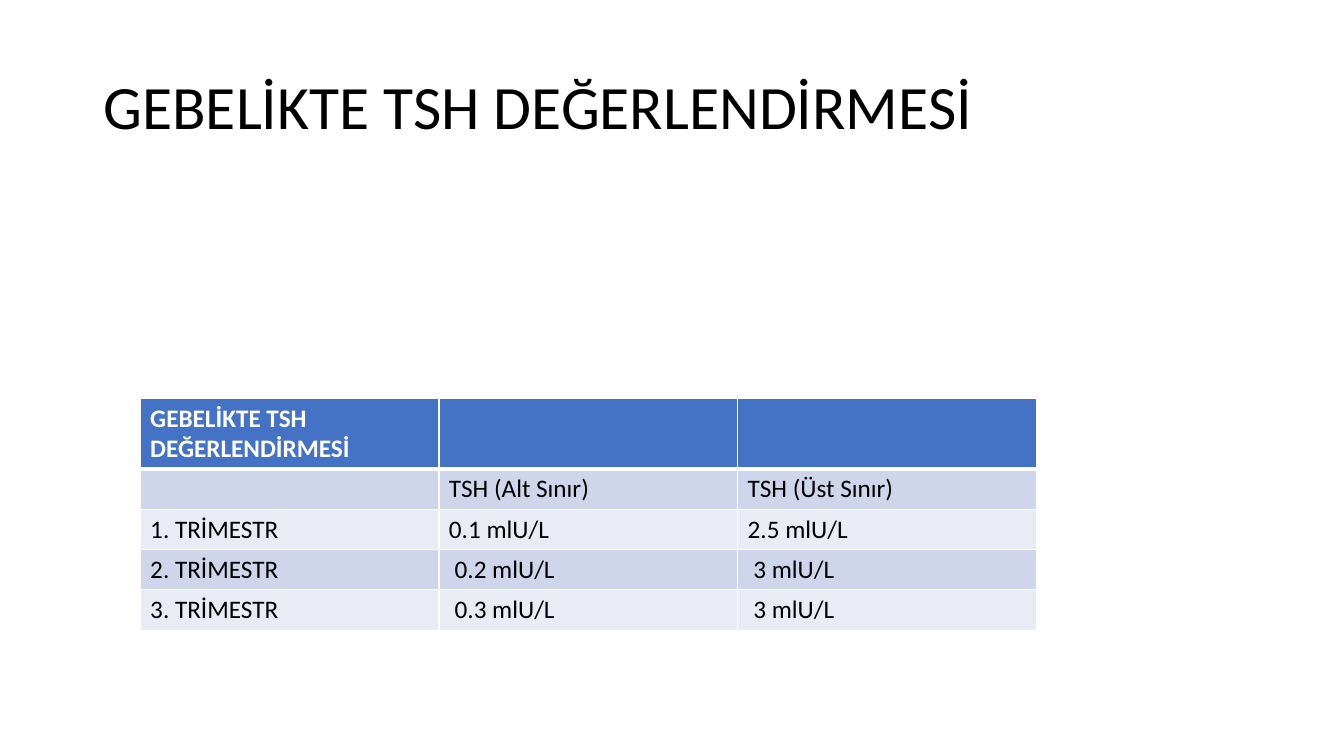
import pptx
import pptx.dml.color
import pptx.enum.text
import pptx.oxml
import pptx.oxml.ns
import pptx.util
from pptx.util import Inches

COLORS = {
    "text": "000000",
    "white": "FFFFFF",
    "header": "4472C4",
    "band_dark": "CFD5EA",
    "band_light": "E9EBF5",
}
FONT = "Calibri"
TITLE = "GEBELİKTE TSH DEĞERLENDİRMESİ"
TSH_ROWS = [
    [TITLE, "", ""],
    ["", "TSH (Alt Sınır)", "TSH (Üst Sınır)"],
    ["1. TRİMESTR", "0.1 mlU/L", "2.5 mlU/L"],
    ["2. TRİMESTR", " 0.2 mlU/L", " 3 mlU/L"],
    ["3. TRİMESTR", " 0.3 mlU/L", " 3 mlU/L"],
]
HEADER_HEIGHT = 0.7


def rgb(name):
    return pptx.dml.color.RGBColor.from_string(COLORS[name])


def write_text(text_frame, text, size=18, color="text", bold=False, line_spacing=1.0):
    paragraph = text_frame.paragraphs[0]
    paragraph.line_spacing = line_spacing
    paragraph.font.size = pptx.util.Pt(size)
    if text:
        run = paragraph.add_run()
        run.text = text
        run.font.name = FONT
        run.font.size = pptx.util.Pt(size)
        run.font.bold = bold
        run.font.color.rgb = rgb(color)


def set_borders(cell, **widths):
    """Draw white cell borders; widths are points keyed by side (L, R, T, B)."""
    properties = cell._tc.get_or_add_tcPr()
    for side, width in widths.items():
        properties.append(pptx.oxml.parse_xml(
            f'<a:ln{side} {pptx.oxml.ns.nsdecls("a")} w="{pptx.util.Pt(width)}">'
            f'<a:solidFill><a:srgbClr val="{COLORS["white"]}"/></a:solidFill>'
            f'</a:ln{side}>'))


def add_title(slide, left, top, width, height):
    box = slide.shapes.add_textbox(
        Inches(left), Inches(top), Inches(width), Inches(height))
    box.text_frame.word_wrap = True
    box.text_frame.vertical_anchor = pptx.enum.text.MSO_ANCHOR.MIDDLE
    write_text(box.text_frame, TITLE, size=44, line_spacing=0.9)


def add_tsh_table(slide, left, top, width, height):
    frame = slide.shapes.add_table(
        len(TSH_ROWS), len(TSH_ROWS[0]),
        Inches(left), Inches(top), Inches(width), Inches(height))
    table = frame.table
    body_height = (height - HEADER_HEIGHT) / (len(TSH_ROWS) - 1)

    for row_index, values in enumerate(TSH_ROWS):
        is_header = row_index == 0
        table.rows[row_index].height = Inches(HEADER_HEIGHT if is_header else body_height)
        band = "band_dark" if row_index % 2 else "band_light"
        for column_index, value in enumerate(values):
            cell = table.cell(row_index, column_index)
            # The rule under the header is heavier than the others
            set_borders(cell, L=1, R=1, T=3 if row_index == 1 else 1,
                        B=3 if is_header else 1)
            cell.fill.solid()
            cell.fill.fore_color.rgb = rgb("header" if is_header else band)
            write_text(cell.text_frame, value, bold=is_header,
                       color="white" if is_header else "text")


def main():
    presentation = pptx.Presentation()
    presentation.slide_width = Inches(13.33)
    presentation.slide_height = Inches(7.5)
    slide = presentation.slides.add_slide(presentation.slide_layouts[6])

    # Title
    add_title(slide, 0.93, 0.36, 11.5, 1.45)
    # Reference limits by trimester
    add_tsh_table(slide, 1.39, 3.95, 8.89, 2.3)

    presentation.save("out.pptx")


if __name__ == "__main__":
    main()
